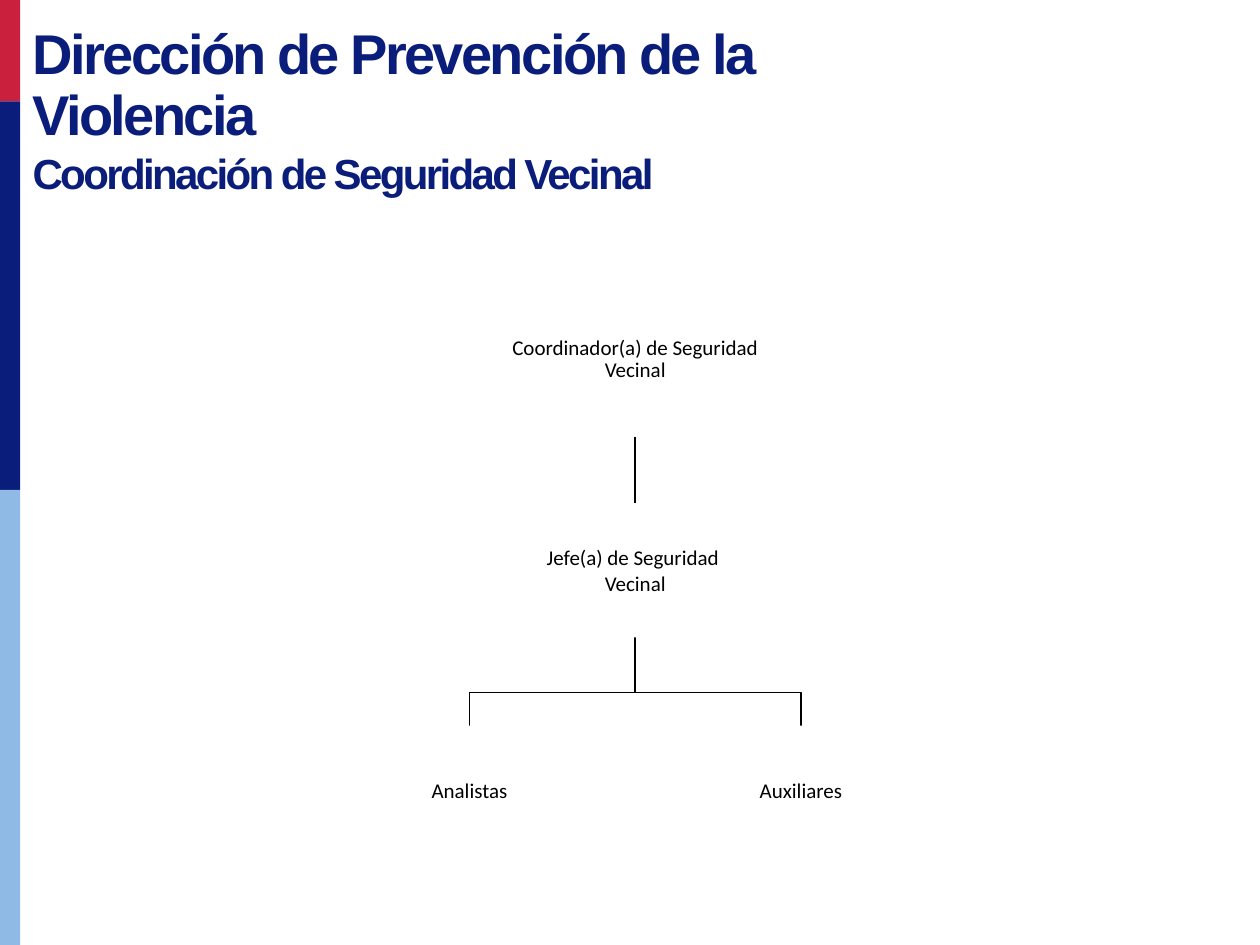
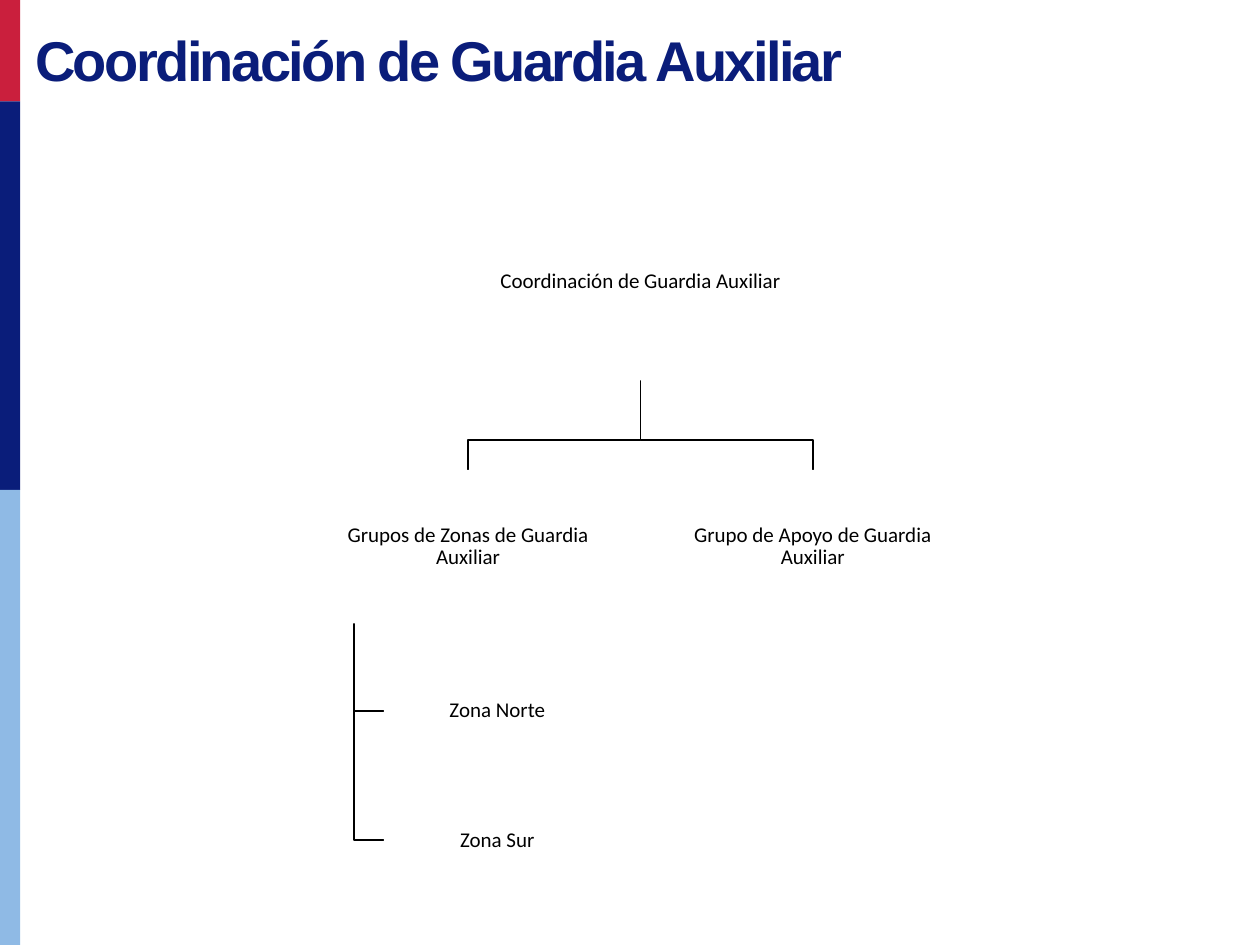
from dataclasses import dataclass

from lxml import etree
from pptx import Presentation
from pptx.dml.color import RGBColor
from pptx.enum.shapes import MSO_CONNECTOR, MSO_SHAPE
from pptx.enum.text import MSO_ANCHOR, MSO_AUTO_SIZE, PP_ALIGN
from pptx.oxml.ns import qn
from pptx.shapes.autoshape import Shape
from pptx.slide import Slide
from pptx.util import Pt

RECTANGLE = MSO_SHAPE.RECTANGLE
STRAIGHT = MSO_CONNECTOR.STRAIGHT
MIDDLE = MSO_ANCHOR.MIDDLE
CENTER = PP_ALIGN.CENTER
GROW = MSO_AUTO_SIZE.SHAPE_TO_FIT_TEXT
TOP, BOTTOM = 0, 2

SLIDE_WIDTH, SLIDE_HEIGHT = 720, 540
RED, NAVY, SKY = "CA1F3D", "0A1D7A", "8FBAE5"
BLACK, WHITE = "000000", "FFFFFF"
TITLE_FONT, BOX_FONT = "Arial", "Calibri"
BAND_WIDTH = 11.5
LINE_WIDTH = 1
BOX_INSET = 0.7
TRUNK_SHARE = 0.1  # trunk position along the parent's width


@dataclass(frozen=True)
class Band:
    top: float
    bottom: float
    color: str


@dataclass(frozen=True)
class TitleLine:
    text: str
    size: float
    line_spacing: float = 1.0


@dataclass(frozen=True)
class Box:
    lines: tuple[str, ...]
    center: float
    top: float
    width: float
    height: float
    line_spacing: float = 0.9

    @property
    def left(self) -> float:
        return self.center - self.width / 2

    @property
    def bottom(self) -> float:
        return self.top + self.height

    @property
    def middle(self) -> float:
        return self.top + self.height / 2


BANDS = (Band(0, 58, RED), Band(58, 280, NAVY), Band(280, SLIDE_HEIGHT, SKY))


def rgb(color: str) -> RGBColor:
    return RGBColor.from_string(color)


def add_rectangle(slide: Slide, left: float, top: float, width: float,
                  height: float, color: str) -> Shape:
    shape = slide.shapes.add_shape(RECTANGLE, Pt(left), Pt(top), Pt(width), Pt(height))
    shape.shadow.inherit = False
    shape.fill.solid()
    shape.fill.fore_color.rgb = rgb(color)
    shape.line.fill.background()
    return shape


def add_title(slide: Slide, left: float, top: float, width: float, height: float,
              lines: tuple[TitleLine, ...]) -> None:
    text_box = slide.shapes.add_textbox(Pt(left), Pt(top), Pt(width), Pt(height))
    frame = text_box.text_frame
    frame.word_wrap = True
    frame.auto_size = GROW
    for index, line in enumerate(lines):
        paragraph = frame.add_paragraph() if index else frame.paragraphs[0]
        paragraph.line_spacing = line.line_spacing
        run = paragraph.add_run()
        run.text = line.text
        run.font.name = TITLE_FONT
        run.font.size = Pt(line.size)
        run.font.bold = True
        run.font.color.rgb = rgb(NAVY)
        run._r.get_or_add_rPr().set("spc", "-150")


def add_box(slide: Slide, box: Box) -> Shape:
    shape = add_rectangle(slide, box.left, box.top, box.width, box.height, WHITE)
    frame = shape.text_frame
    frame.word_wrap = True
    frame.vertical_anchor = MIDDLE
    frame.margin_left = frame.margin_right = Pt(BOX_INSET)
    frame.margin_top = frame.margin_bottom = Pt(BOX_INSET)
    paragraph = frame.paragraphs[0]
    paragraph.alignment = CENTER
    paragraph.line_spacing = box.line_spacing
    for index, line in enumerate(box.lines):
        if index:
            paragraph.add_line_break()
        run = paragraph.add_run()
        run.text = line
        run.font.name = BOX_FONT
        run.font.size = Pt(12)
        run.font.color.rgb = rgb(BLACK)
    return shape


def add_bent_line(slide: Slide, points: list[tuple[float, float]]) -> None:
    start, *others = [(Pt(x), Pt(y)) for x, y in points]
    builder = slide.shapes.build_freeform(*start, scale=1.0)
    builder.add_line_segments(others, close=False)
    shape = builder.convert_to_shape()
    shape.shadow.inherit = False
    shape.fill.background()
    shape.line.color.rgb = rgb(BLACK)
    shape.line.width = Pt(LINE_WIDTH)


def link_below(slide: Slide, parent: Box, children: tuple[Box, ...], drop: float) -> None:
    """Fork from the parent's bottom; drop is the last stretch down to a child."""
    for child in children:
        fork = child.top - drop
        add_bent_line(slide, [(parent.center, parent.bottom), (parent.center, fork),
                              (child.center, fork), (child.center, child.top)])


def link_beside(slide: Slide, parent: Box, children: tuple[Box, ...]) -> None:
    """Run a trunk down from the parent and branch to each child's left side."""
    trunk = parent.left + parent.width * TRUNK_SHARE
    for child in children:
        add_bent_line(slide, [(trunk, parent.bottom), (trunk, child.middle),
                              (child.left, child.middle)])


def connect_down(slide: Slide, upper: Shape, lower: Shape) -> None:
    connector = slide.shapes.add_connector(STRAIGHT, 0, 0, 0, 0)
    connector.begin_connect(upper, BOTTOM)
    connector.end_connect(lower, TOP)
    connector.line.color.rgb = rgb(BLACK)
    connector.line.width = Pt(LINE_WIDTH)
    etree.SubElement(connector._element.spPr, qn("a:effectLst"))


def add_banded_slide(presentation: Presentation) -> Slide:
    slide = presentation.slides.add_slide(presentation.slide_layouts[6])
    for band in BANDS:
        add_rectangle(slide, 0, band.top, BAND_WIDTH, band.bottom - band.top, band.color)
    return slide


def build_neighborhood_security(presentation: Presentation) -> None:
    slide = add_banded_slide(presentation)
    add_title(slide, 11.5, 11.5, 543.6, 71.3, (
        TitleLine("Dirección de Prevención de la Violencia", 32, 0.9),
        TitleLine("Coordinación de Seguridad Vecinal", 24)))

    axis, offset = 363, 94.7
    coordinator = Box(("Coordinador(a) de Seguridad Vecinal",), axis, 161.3, 177, 88.5)
    chief = Box(("Jefe(a) de Seguridad ", "Vecinal"), axis, 287.3, 150.5, 77, 1.0)
    staff = tuple(Box((name,), axis + side * offset, 414.7, 152, 75.6)
                  for side, name in ((-1, "Analistas"), (1, "Auxiliares")))

    link_below(slide, chief, staff, 19)
    connect_down(slide, add_box(slide, coordinator), add_box(slide, chief))
    for box in staff:
        add_box(slide, box)


def build_auxiliary_guard(presentation: Presentation) -> None:
    slide = add_banded_slide(presentation)
    axis, offset = 366, 98.5
    coordination = Box(("Coordinación de Guardia Auxiliar",), axis, 104.4, 226, 113)
    groups = tuple(Box((name,), axis + side * offset, 268.5, 162.7, 87.8)
                   for side, name in ((-1, "Grupos de Zonas de Guardia Auxiliar"),
                                      (1, "Grupo de Apoyo de Guardia Auxiliar")))
    zones = tuple(Box((name,), 284.2, 377.4 + row * 74, 129.6, 57.6)
                  for row, name in enumerate(("Zona Norte", "Zona Sur")))

    link_below(slide, coordination, groups, 17)
    link_beside(slide, groups[0], zones)
    for box in (coordination, *groups, *zones):
        add_box(slide, box)
    add_title(slide, 13, 10.8, 537, 46,
              (TitleLine("Coordinación de Guardia Auxiliar", 32),))


def main() -> None:
    presentation = Presentation()
    presentation.slide_width = Pt(SLIDE_WIDTH)
    presentation.slide_height = Pt(SLIDE_HEIGHT)
    build_neighborhood_security(presentation)
    build_auxiliary_guard(presentation)
    presentation.save("out.pptx")


if __name__ == "__main__":
    main()
